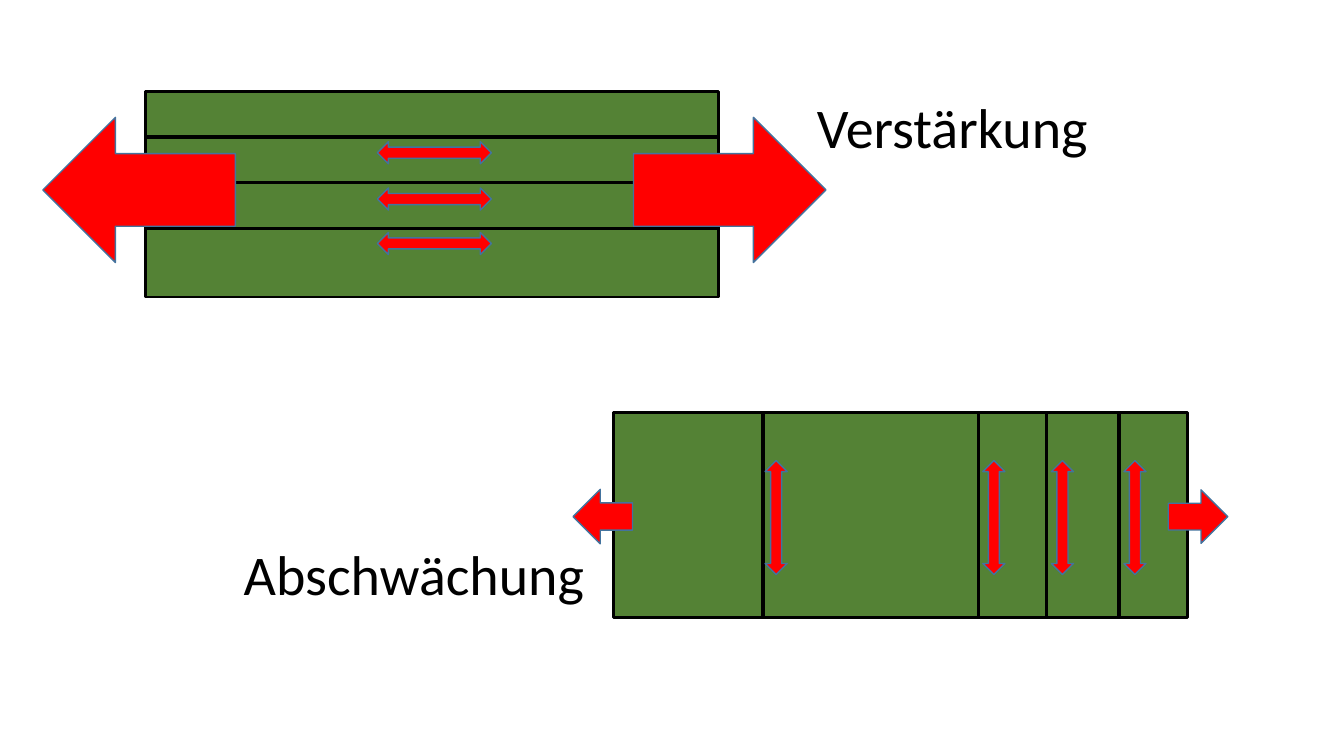
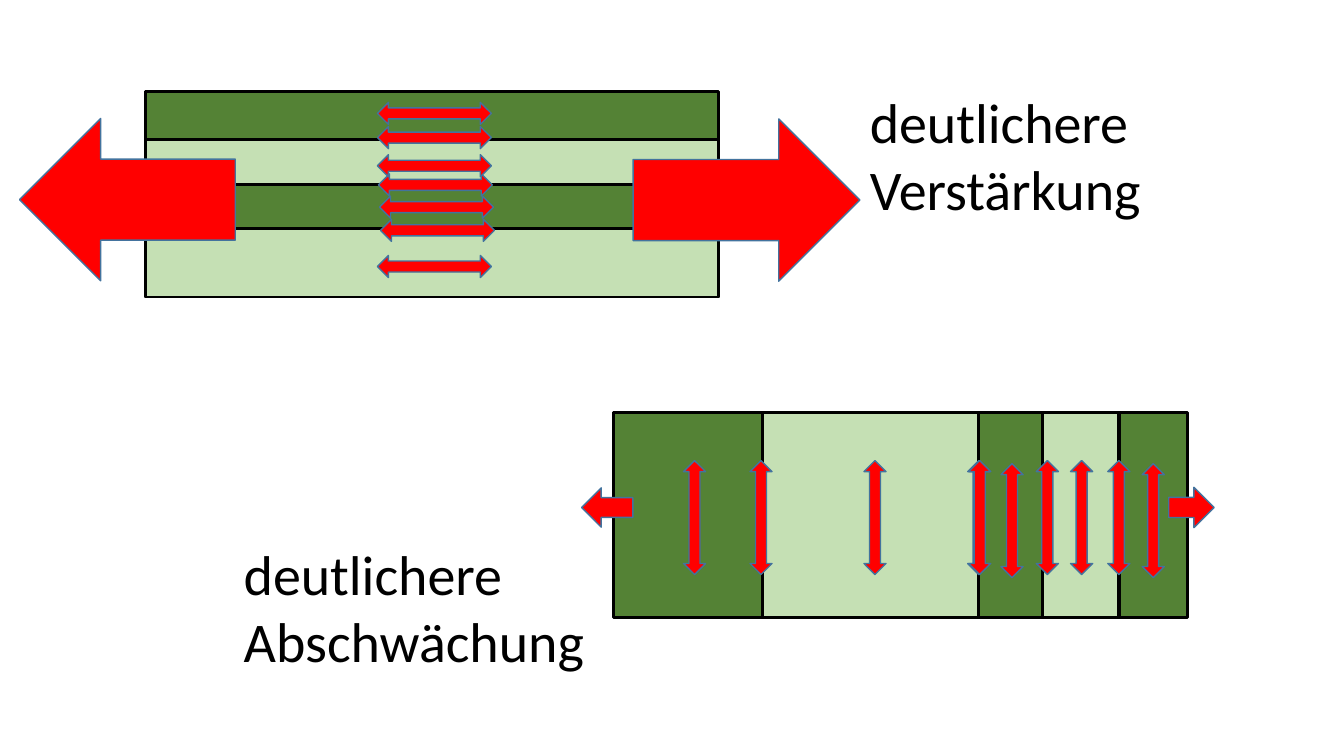
from pptx import Presentation
from pptx.dml.color import RGBColor
from pptx.enum.shapes import MSO_CONNECTOR, MSO_SHAPE
from pptx.oxml.ns import qn
from pptx.util import Pt
from lxml import etree

RECT = MSO_SHAPE.RECTANGLE
LEFT = MSO_SHAPE.LEFT_ARROW
RIGHT = MSO_SHAPE.RIGHT_ARROW
WIDE = MSO_SHAPE.LEFT_RIGHT_ARROW
TALL = MSO_SHAPE.UP_DOWN_ARROW
LINE = MSO_CONNECTOR.STRAIGHT

HUES = {"dark": "548235", "light": "C5E0B4", "red": "FF0000",
        "edge": "43739E", "ink": "000000"}
FONT, SIZE = "Calibri", 40
WIDTH, HEIGHT = 409.7, 146.7
TOP = (103.7, 65.5)
LOW = (438.5, 294.5)
LONG, THIN = 81.4, 15.8
MID_X, MID_Y = 310.3, 369.7

SLIDES = [
    {
        "rows": [97.9, 130.3, 163.4],
        "cols": [545, 699.1, 747.4, 799.2],
        "bands": [],
        "strips": [],
        "labels": [("Verstärkung", 576.4, 62.6, 238.3, 55.4),
                   ("Abschwächung", 167, 381.6, 301, 55.4)],
        "pulls": [(LEFT, 168.1, 135.7, 137.5, 103.7),
                  (RIGHT, 452.5, 135.7, 137.5, 103.7),
                  (LEFT, 451.8, 369, 42.5, 38.9),
                  (RIGHT, 834.5, 369, 42.5, 38.2)],
        "tall": [(554.4, MID_Y), (709.9, MID_Y), (758.9, MID_Y),
                 (810.7, MID_Y)],
        "wide": [(MID_X, 109.1), (MID_X, 142.2), (MID_X, 173.9)],
    },
    {
        "rows": [],
        "cols": [545, 699.1, 799.2],
        "bands": [(99.4, 131.8), (163.4, 212.2)],
        "strips": [(545, 699.1), (744.5, 799.2)],
        "labels": [("deutlichere Verstärkung", 614.2, 59, 238.3, 104.4),
                   ("deutlichere Abschwächung", 167, 381.6, 301, 104.4)],
        "pulls": [(LEFT, 168.1, 142.6, 154.1, 115.9),
                  (RIGHT, 452.2, 142.9, 162, 115.9),
                  (LEFT, 452.1, 362.5, 36.7, 28.1),
                  (RIGHT, 834.8, 362.5, 32.4, 28.8)],
        "tall": [(543.6, MID_Y), (699.1, MID_Y), (748.1, MID_Y),
                 (799.2, MID_Y), (496.1, MID_Y), (625, MID_Y),
                 (699.8, MID_Y), (772.6, MID_Y), (722.9, 371.9),
                 (823.7, 371.9)],
        "wide": [(MID_X, 98.3), (311, 132.1), (311.8, 148), (MID_X, 81),
                 (MID_X, 118.4), (312.5, 164.5), (MID_X, 190.4)],
    },
]


def hue(name):
    return RGBColor.from_string(HUES[name])


def add_form(slide, kind, x, y, w, h, fill, edge, weight):
    form = slide.shapes.add_shape(kind, Pt(x), Pt(y), Pt(w), Pt(h))
    form.shadow.inherit = False
    form.fill.solid()
    form.fill.fore_color.rgb = hue(fill)
    form.line.color.rgb = hue(edge)
    form.line.width = Pt(weight)


def add_block(slide, x, y, w, h, fill):
    add_form(slide, RECT, x, y, w, h, fill, "ink", 2)


def add_arrow(slide, kind, x, y, w, h):
    add_form(slide, kind, x, y - h / 2, w, h, "red", "edge", 1)


def add_line(slide, x, y, w, h):
    line = slide.shapes.add_connector(LINE, Pt(x), Pt(y), Pt(x + w), Pt(y + h))
    line.line.color.rgb = hue("ink")
    line.line.width = Pt(2.5)
    etree.SubElement(line._element.spPr, qn("a:effectLst"))


def add_label(slide, text, x, y, w, h):
    frame = slide.shapes.add_textbox(Pt(x), Pt(y), Pt(w), Pt(h)).text_frame
    frame.word_wrap = True
    frame.text = text
    font = frame.paragraphs[0].runs[0].font
    font.name, font.size = FONT, Pt(SIZE)
    font.color.rgb = hue("ink")


def build(slide, data):
    for x, y in (TOP, LOW):
        add_block(slide, x, y, WIDTH, HEIGHT, "dark")
    for y in data["rows"]:
        add_line(slide, TOP[0], y, WIDTH, 0)
    for x in data["cols"]:
        add_line(slide, x, LOW[1], 0, HEIGHT)
    for y, end in data["bands"]:
        add_block(slide, TOP[0], y, WIDTH, end - y, "light")
    for x, end in data["strips"]:
        add_block(slide, x, LOW[1], end - x, HEIGHT, "light")
    for label in data["labels"]:
        add_label(slide, *label)
    for kind, base, y, w, h in data["pulls"]:
        x = base - w if kind == LEFT else base
        add_arrow(slide, kind, x, y, w, h)
    for key, kind, w, h in (("tall", TALL, THIN, LONG),
                            ("wide", WIDE, LONG, THIN)):
        for x, y in data[key]:
            add_arrow(slide, kind, x - w / 2, y, w, h)


def main():
    deck = Presentation()
    deck.slide_width, deck.slide_height = Pt(960), Pt(540)
    for data in SLIDES:
        build(deck.slides.add_slide(deck.slide_layouts[6]), data)
    deck.save("out.pptx")


if __name__ == "__main__":
    main()
